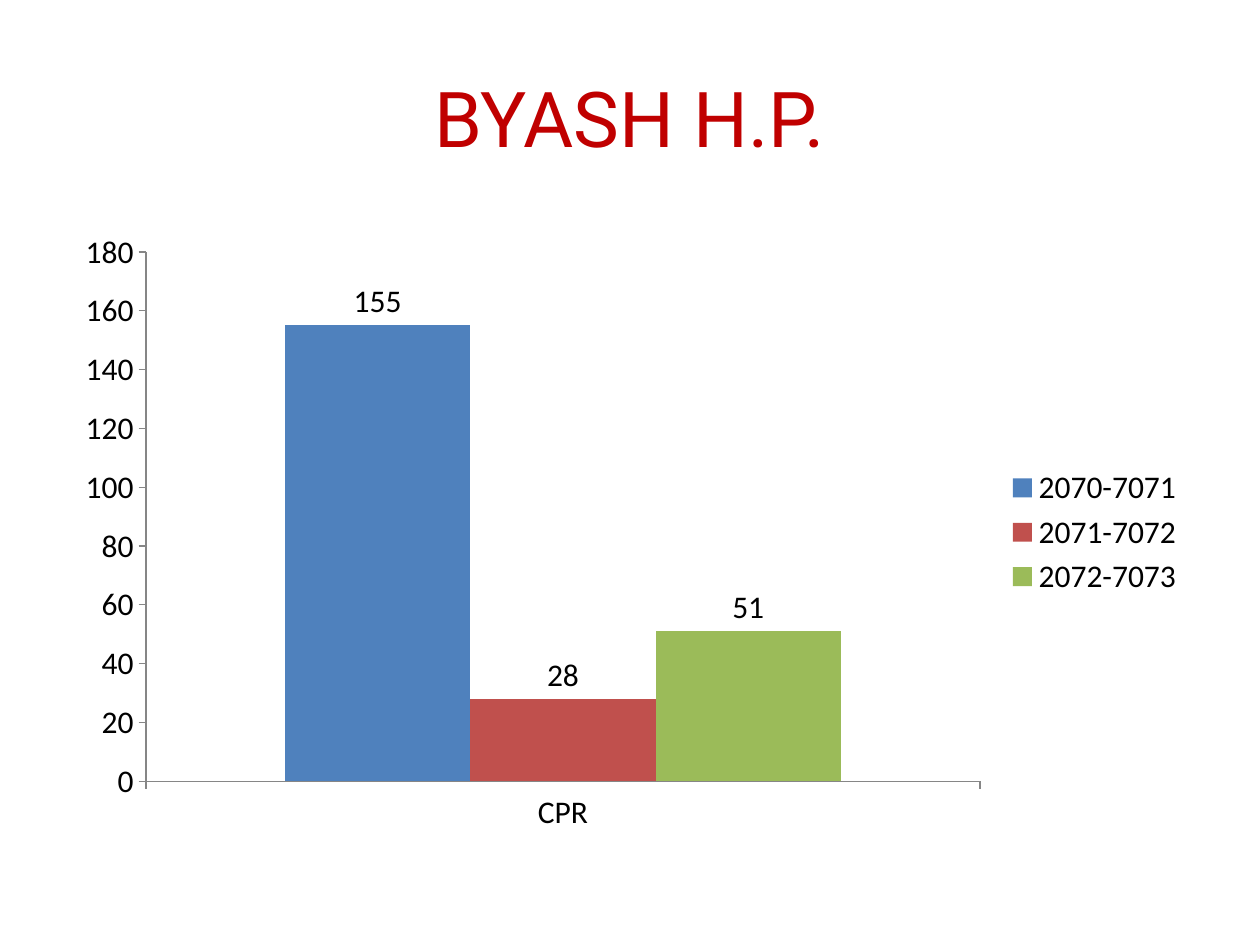
from pptx import Presentation
from pptx import util as u
from pptx.chart.data import CategoryChartData
from pptx.dml.color import RGBColor
from pptx.enum import chart as ch, text

PX = 9144  # EMU per px, at 100 px to the inch

COLORS = {
    "title": "C00000",
    "text": "000000",
    "axis": "868686",
    "2070-7071": "4F81BD",
    "2071-7072": "C0504D",
    "2072-7073": "9BBB59",
}
CPR_BY_YEAR = {"2070-7071": 155, "2071-7072": 28, "2072-7073": 51}


def px(*lengths):
    return [u.Emu(length * PX) for length in lengths]


def rgb(name):
    return RGBColor.from_string(COLORS[name])


def style_font(font, name, size, color):
    font.name = name
    font.size = u.Pt(size)
    font.color.rgb = rgb(color)


def fill_title(slide, wording):
    title = slide.shapes.title
    title.left, title.top, title.width, title.height = px(50, 30, 900, 125)
    title.text_frame.vertical_anchor = text.MSO_ANCHOR.MIDDLE
    paragraph = title.text_frame.paragraphs[0]
    paragraph.alignment = text.PP_ALIGN.CENTER
    run = paragraph.add_run()
    run.text = wording
    style_font(run.font, "Roboto", 44, "title")


def style_axis(axis):
    axis.has_major_gridlines = False
    axis.major_tick_mark = ch.XL_TICK_MARK.OUTSIDE
    axis.minor_tick_mark = ch.XL_TICK_MARK.NONE
    axis.format.line.color.rgb = rgb("axis")
    axis.format.line.width = u.Pt(0.75)


def add_cpr_chart(slide):
    data = CategoryChartData()
    data.categories = ["CPR"]
    for year, count in CPR_BY_YEAR.items():
        data.add_series(year, [count])
    chart = slide.shapes.add_chart(
        ch.XL_CHART_TYPE.COLUMN_CLUSTERED, *px(50, 175, 900, 495), data
    ).chart
    style_font(chart.font, "Calibri", 18, "text")
    chart.has_title = False

    chart.has_legend = True
    chart.legend.position = ch.XL_LEGEND_POSITION.RIGHT
    chart.legend.include_in_layout = False

    style_axis(chart.category_axis)
    style_axis(chart.value_axis)
    chart.value_axis.minimum_scale = 0
    chart.value_axis.maximum_scale = 180
    chart.value_axis.major_unit = 20

    plot = chart.plots[0]
    plot.gap_width = 150
    plot.overlap = 0
    plot.vary_by_categories = False
    for year in plot.series:
        year.format.fill.solid()
        year.format.fill.fore_color.rgb = rgb(year.name)
        year.data_labels.show_value = True
        year.data_labels.position = ch.XL_LABEL_POSITION.OUTSIDE_END


def main():
    deck = Presentation()
    deck.slide_width, deck.slide_height = px(1000, 750)
    slide = deck.slides.add_slide(deck.slide_layouts[5])
    fill_title(slide, "BYASH H.P.")
    add_cpr_chart(slide)
    deck.save("out.pptx")


if __name__ == "__main__":
    main()
